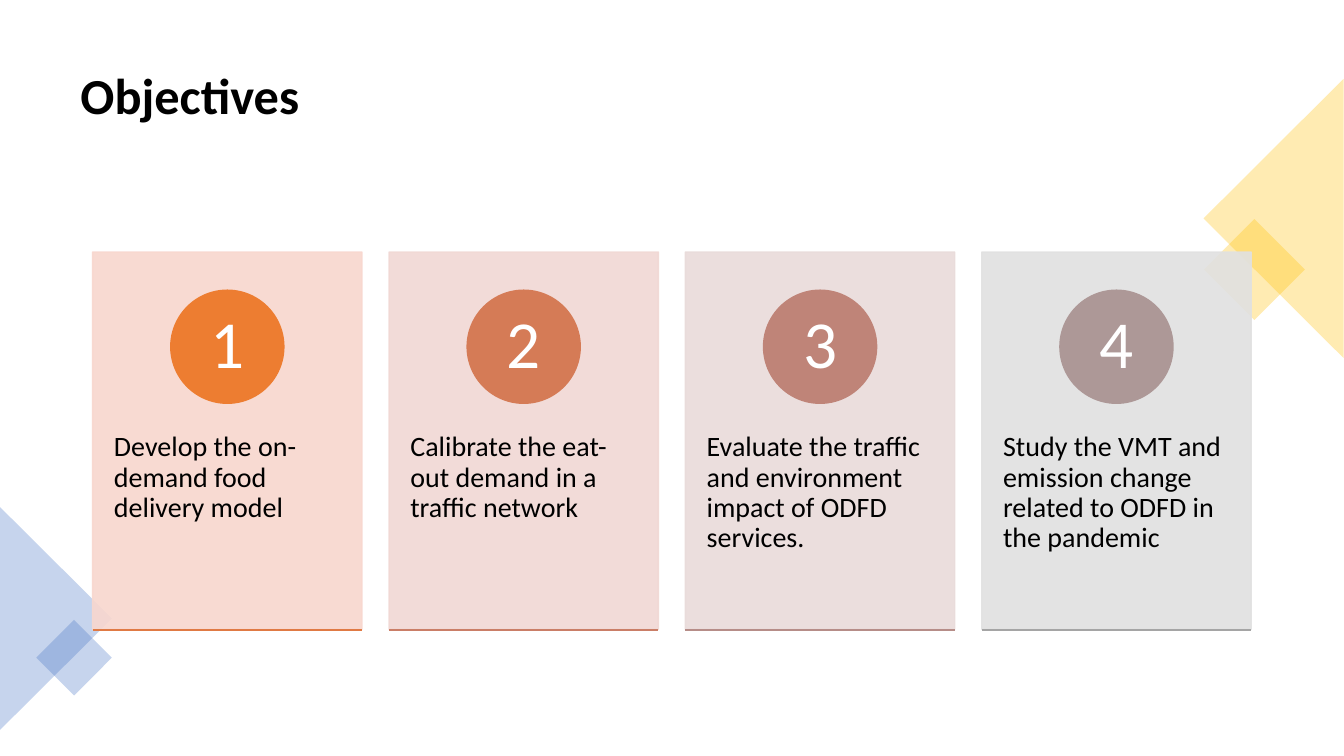
import pptx
import pptx.util
import pptx.dml.color
import pptx.enum.shapes
import pptx.enum.text
import pptx.oxml.ns
import lxml.etree

Pt = pptx.util.Pt
RGB = pptx.dml.color.RGBColor
SHAPE = pptx.enum.shapes.MSO_SHAPE
LINE = pptx.enum.shapes.MSO_CONNECTOR
ALIGN = pptx.enum.text.PP_ALIGN
ANCHOR = pptx.enum.text.MSO_ANCHOR
qn = pptx.oxml.ns.qn

TITLE = "Objectives"
# text, card colour, disc colour, rule colour
GOALS = [
    ("Develop the on-demand food delivery model", "F8D7CE", "ED7D31", "E07A44"),
    ("Calibrate the eat-out demand in a traffic network", "F1D8D4", "D57B56", "CA7E67"),
    ("Evaluate the traffic and environment impact of ODFD services.", "E9DBDA", "BF8478", "B68D88"),
    ("Study the VMT and emission change related to ODFD in the pandemic", "E1E1E1", "AD9897", "A5A5A5"),
]
THEME = {
    "font": "Calibri", "ink": "000000", "light": "FFFFFF",
    "gold": "FFC000", "blue": "4472C4",
    "title": 36, "body": 20, "digit": 48,
    "tint": 30, "veil": 90,
}
# shape, left, top, width, height, turn, colour
DECOR = [
    (SHAPE.RECTANGLE, 870.5, 167, 51, 51, 45, "gold"),
    (SHAPE.ISOSCELES_TRIANGLE, 810, 106, 199.4, 100, 270, "gold"),
    (SHAPE.ISOSCELES_TRIANGLE, -39.6, 401.8, 159.2, 80, 90, "blue"),
    (SHAPE.RECTANGLE, 33.8, 450.7, 38.2, 38.2, 45, "blue"),
]
LEFT, TOP, WIDE, HIGH, STEP = 66.2, 180, 192.4, 269.5, 211.7
DISC, DIGIT, DROP = 80.8, 57, 27.3
BODY_TOP, BODY_HIGH, BASE = 283, 162, 450


def fade(fill, share):
    """Set the opacity of a solid fill or line colour, in percent."""
    for color in fill.iter(qn("a:srgbClr")):
        lxml.etree.SubElement(color, qn("a:alpha")).set("val", str(share * 1000))


def draw(shapes, kind, box, color, edge=False, share=100):
    shape = shapes.add_shape(kind, *map(Pt, box))
    shape.shadow.inherit = False
    shape.fill.solid()
    shape.fill.fore_color.rgb = RGB.from_string(color)
    if edge:
        shape.line.color.rgb = RGB.from_string(color)
        shape.line.width = Pt(1)
    else:
        shape.line.fill.background()
    if share < 100:
        fade(shape._element.spPr, share)
    return shape


def write(shapes, box, text, size, color, inset, bold=False,
          align=ALIGN.LEFT, anchor=ANCHOR.MIDDLE):
    frame = shapes.add_textbox(*map(Pt, box)).text_frame
    frame.word_wrap = True
    frame.vertical_anchor = anchor
    frame.margin_left = frame.margin_right = Pt(inset[0])
    frame.margin_top = frame.margin_bottom = Pt(inset[1])
    para = frame.paragraphs[0]
    para.alignment = align
    para.line_spacing = 0.9
    run = para.add_run()
    run.text = text
    run.font.name = THEME["font"]
    run.font.size = Pt(THEME[size])
    run.font.bold = bold
    run.font.color.rgb = RGB.from_string(THEME[color])


def rule(shapes, left, color):
    line = shapes.add_connector(LINE.STRAIGHT, Pt(left), Pt(BASE), Pt(left + WIDE), Pt(BASE))
    line.line.color.rgb = RGB.from_string(color)
    line.line.width = Pt(1)
    lxml.etree.SubElement(line._element.spPr, qn("a:effectLst"))


def card(shapes, index, text, back, disc, base):
    left = LEFT + index * STEP
    mid_x, mid_y = left + WIDE / 2, TOP + DROP + DISC / 2
    draw(shapes, SHAPE.RECTANGLE, (left, TOP, WIDE, HIGH), back, True, THEME["veil"])
    write(shapes, (left, BODY_TOP, WIDE, BODY_HIGH), text, "body", "ink",
          (15.2, 26), anchor=ANCHOR.TOP)
    draw(shapes, SHAPE.OVAL, (mid_x - DISC / 2, mid_y - DISC / 2, DISC, DISC), disc, True)
    write(shapes, (mid_x - DIGIT / 2, mid_y - DIGIT / 2, DIGIT, DIGIT), str(index + 1),
          "digit", "light", (6.3, 1), align=ALIGN.CENTER)
    rule(shapes, left, base)


def main():
    deck = pptx.Presentation()
    deck.slide_width, deck.slide_height = Pt(960), Pt(540)
    slide = deck.slides.add_slide(deck.slide_layouts[6])
    write(slide.shapes, (50.4, 25.2, 859, 89.3), TITLE, "title", "ink", (7.2, 3.6), bold=True)
    for kind, left, top, wide, high, turn, color in DECOR:
        shape = draw(slide.shapes, kind, (left, top, wide, high), THEME[color],
                     share=THEME["tint"])
        shape.rotation = turn
    group = slide.shapes.add_group_shape()
    for index, goal in enumerate(GOALS):
        card(group.shapes, index, *goal)
    deck.save("out.pptx")


if __name__ == "__main__":
    main()
